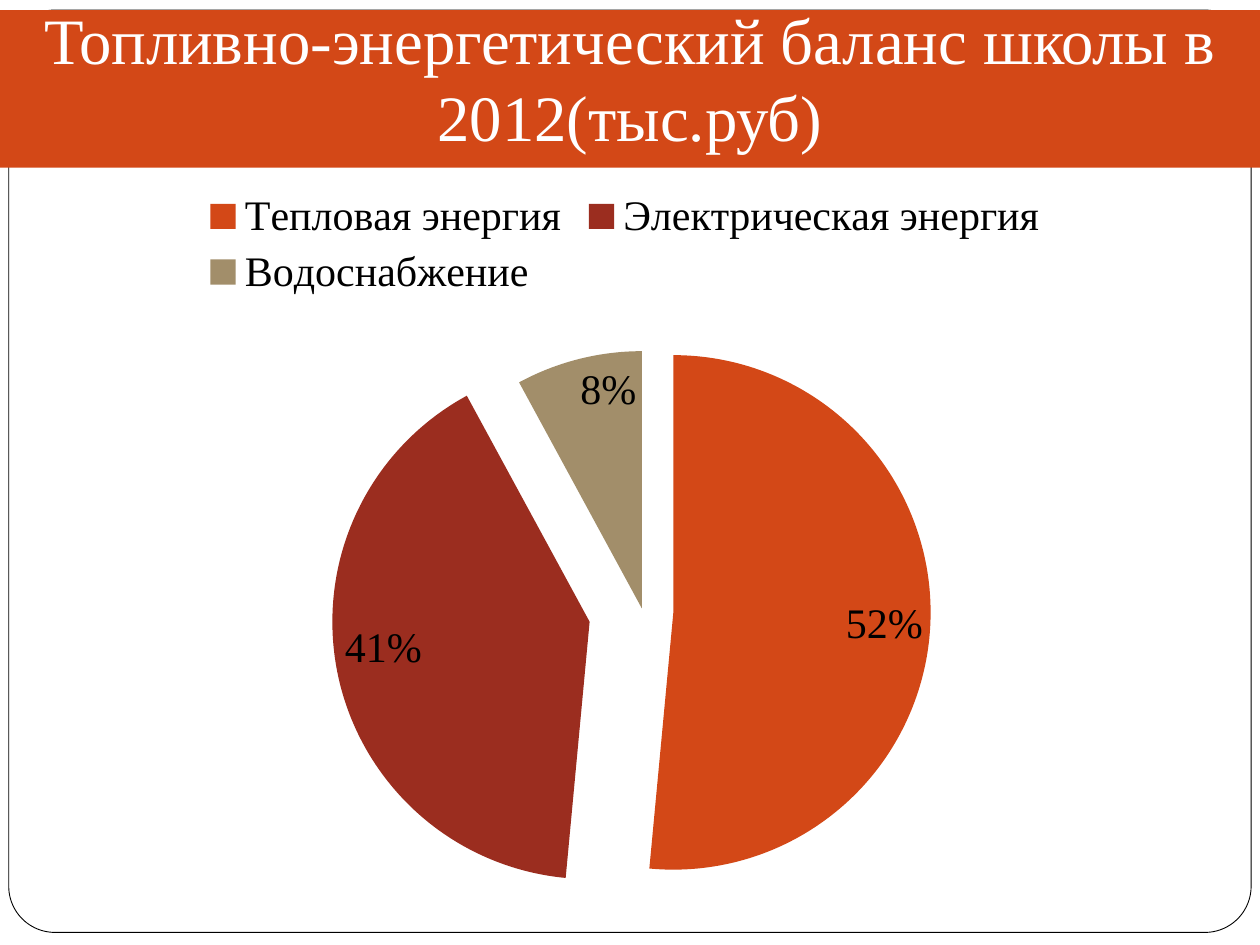
"""Build a one-slide deck showing the school's energy balance as a pie chart."""
from dataclasses import dataclass

import pptx
import pptx.chart.data
import pptx.dml.color
import pptx.enum.chart
import pptx.enum.shapes
import pptx.enum.text
import pptx.util
from lxml import etree
from pptx.oxml.ns import qn

WIDTH, HEIGHT = 10, 7.5
FONT = "Times New Roman"
LABEL_SIZE = 24


@dataclass
class Area:
    left: float
    top: float
    width: float
    height: float

    def lengths(self) -> list:
        return [pptx.util.Inches(value) for value in (self.left, self.top, self.width, self.height)]


@dataclass
class Slice:
    name: str
    percent: int
    color: str
    explosion: int


FRAME = Area(0.07, 0.08, WIDTH - 0.14, 7.32)
BANNER = Area(0, 0.08, WIDTH, HEIGHT / 6)
CHART = Area(0.43, 1.39, 9.06, 5.98)
PLOT_SHARES = {"x": 0.095, "y": 0.237, "w": 0.841, "h": 0.683}
SLICES = [
    Slice("Тепловая энергия", 52, "D34817", 12),
    Slice("Электрическая энергия", 41, "9B2D1F", 21),
    Slice("Водоснабжение", 8, "A28E6A", 1),
]


def color(value: str) -> pptx.dml.color.RGBColor:
    return pptx.dml.color.RGBColor.from_string(value)


def paint(fill, value: str) -> None:
    fill.solid()
    fill.fore_color.rgb = color(value)


def format_font(font, size: float, value: str = "000000") -> None:
    font.name, font.size, font.bold = FONT, pptx.util.Pt(size), False
    font.color.rgb = color(value)


def write_text(frame, text: str, *, size: float, value: str, align) -> None:
    para = frame.paragraphs[0]
    para.alignment = align
    span = para.add_run()
    span.text = text
    format_font(span.font, size, value)


def draw_frame(page) -> None:
    box = page.shapes.add_shape(
        pptx.enum.shapes.MSO_SHAPE.ROUNDED_RECTANGLE, *FRAME.lengths())
    box.adjustments[0] = 0.05
    box.shadow.inherit = False
    paint(box.fill, "FFFFFF")
    box.line.color.rgb = color("000000")
    box.line.width = pptx.util.Pt(0.5)
    page.shapes.title.element.addprevious(box.element)


def draw_title(page, text: str) -> None:
    title = page.shapes.title
    title.left, title.top, title.width, title.height = BANNER.lengths()
    paint(title.fill, "D34817")
    frame = title.text_frame
    frame.word_wrap = True
    frame.auto_size = pptx.enum.text.MSO_AUTO_SIZE.NONE
    frame.vertical_anchor = pptx.enum.text.MSO_ANCHOR.BOTTOM
    frame.margin_left = frame.margin_right = frame.margin_bottom = pptx.util.Inches(0.1)
    frame.margin_top = pptx.util.Inches(0.05)
    write_text(frame, text, size=37, value="FFFFFF", align=pptx.enum.text.PP_ALIGN.CENTER)


def place_plot(chart) -> None:
    area = chart.element.find(".//" + qn("c:plotArea"))
    layout = area.find(qn("c:layout"))
    if layout is None:
        layout = etree.Element(qn("c:layout"))
        area.insert(0, layout)
    manual = etree.SubElement(layout, qn("c:manualLayout"))
    settings = {"layoutTarget": "inner", "xMode": "edge", "yMode": "edge", **PLOT_SHARES}
    for tag, value in settings.items():
        etree.SubElement(manual, qn("c:" + tag)).set("val", str(value))


def explode(point_format, percent: int) -> None:
    properties = point_format.element if hasattr(point_format, "element") else point_format
    explosion = etree.Element(qn("c:explosion"))
    explosion.set("val", str(percent))
    properties.addprevious(explosion)


def draw_chart(page, slices: list[Slice]) -> None:
    data = pptx.chart.data.CategoryChartData()
    data.categories = [part.name for part in slices]
    data.add_series("Series 1", [part.percent for part in slices])
    chart = page.shapes.add_chart(
        pptx.enum.chart.XL_CHART_TYPE.PIE, *CHART.lengths(), data).chart
    chart.has_title = False
    format_font(chart.font, 10)
    chart.has_legend = True
    chart.legend.position = pptx.enum.chart.XL_LEGEND_POSITION.TOP
    chart.legend.include_in_layout = False
    format_font(chart.legend.font, LABEL_SIZE)
    place_plot(chart)

    plot = chart.plots[0]
    plot.vary_by_categories = True
    for index, part in enumerate(slices):
        paint(plot.series[0].points[index].format.fill, part.color)
    points = chart.element.iter(qn("c:dPt"))
    for point, part in zip(points, slices):
        explode(point.find(qn("c:spPr")), part.explosion)

    plot.has_data_labels = True
    labels = plot.data_labels
    labels.show_value = True
    labels.number_format = '0"%"'
    labels.number_format_is_linked = False
    labels.position = pptx.enum.chart.XL_LABEL_POSITION.INSIDE_END
    format_font(labels.font, LABEL_SIZE)


def main() -> None:
    deck = pptx.Presentation()
    deck.slide_width = pptx.util.Inches(WIDTH)
    deck.slide_height = pptx.util.Inches(HEIGHT)
    page = deck.slides.add_slide(deck.slide_layouts[5])
    draw_frame(page)
    draw_title(page, "Топливно-энергетический баланс школы в 2012(тыс.руб)")
    draw_chart(page, SLICES)
    deck.save("out.pptx")


if __name__ == "__main__":
    main()
